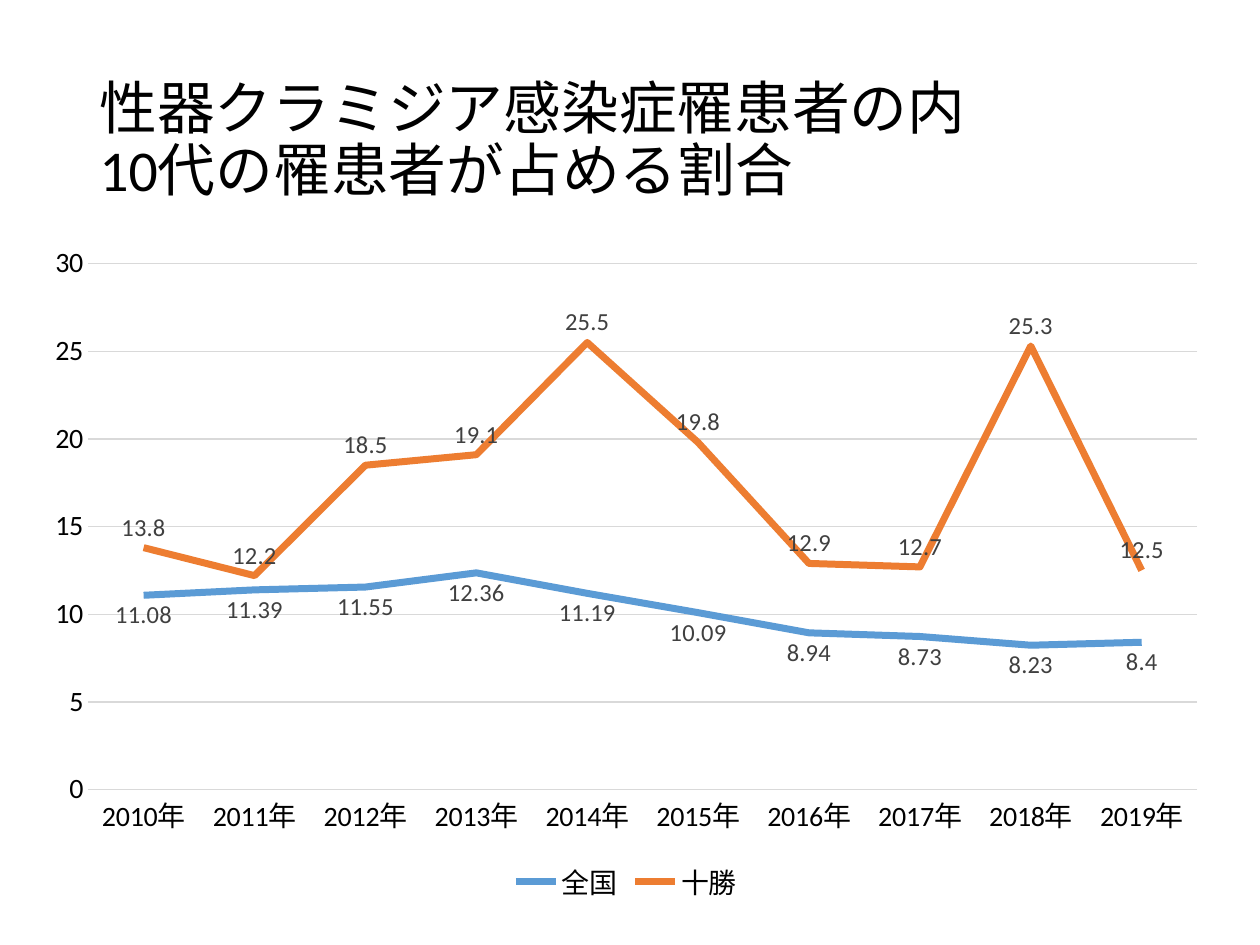
from pptx import Presentation
from pptx.chart.data import CategoryChartData
from pptx.dml.color import RGBColor
from pptx.enum.chart import (XL_CHART_TYPE, XL_LABEL_POSITION, XL_LEGEND_POSITION,
                             XL_MARKER_STYLE, XL_TICK_MARK)
from pptx.enum.text import MSO_ANCHOR
from pptx.util import Inches, Pt

BLACK = RGBColor(0x00, 0x00, 0x00)
LABEL_GRAY = RGBColor(0x40, 0x40, 0x40)
GRID_GRAY = RGBColor(0xD9, 0xD9, 0xD9)
BLUE = RGBColor(0x5B, 0x9B, 0xD5)
ORANGE = RGBColor(0xED, 0x7D, 0x31)
FONT = "Calibri"

WIDTH, HEIGHT = Inches(10), Inches(7.5)
TITLE_BOX = (Inches(0.69), Inches(0.4), Inches(8.62), Inches(1.45))
CHART_BOX = (Inches(0.25), Inches(1.85), Inches(9.44), Inches(5.35))

TITLE = "性器クラミジア感染症罹患者の内\v10代の罹患者が占める割合"
YEARS = [f"{year}年" for year in range(2010, 2020)]
SERIES = [
    ("全国", [11.08, 11.39, 11.55, 12.36, 11.19, 10.09, 8.94, 8.73, 8.23, 8.4],
     BLUE, XL_LABEL_POSITION.BELOW),
    ("十勝", [13.8, 12.2, 18.5, 19.1, 25.5, 19.8, 12.9, 12.7, 25.3, 12.5],
     ORANGE, XL_LABEL_POSITION.ABOVE),
]


def set_font(font, size, color=BLACK):
    font.name = FONT
    font.size = Pt(size)
    font.color.rgb = color


def set_line(line, color, width):
    line.color.rgb = color
    line.width = Pt(width)


def add_title(slide, box):
    tf = slide.shapes.add_textbox(*box).text_frame
    tf.word_wrap = True
    tf.vertical_anchor = MSO_ANCHOR.MIDDLE
    p = tf.paragraphs[0]
    p.text = TITLE
    p.line_spacing = 0.9
    set_font(p.font, 33)


def style_axes(chart):
    for axis in (chart.category_axis, chart.value_axis):
        axis.major_tick_mark = axis.minor_tick_mark = XL_TICK_MARK.NONE
        set_font(axis.tick_labels.font, 16)
    set_line(chart.category_axis.format.line, GRID_GRAY, 0.75)

    value_axis = chart.value_axis
    value_axis.minimum_scale, value_axis.maximum_scale = 0, 30
    value_axis.major_unit = 5
    value_axis.format.line.fill.background()
    set_line(value_axis.major_gridlines.format.line, GRID_GRAY, 0.75)


def style_series(series, color, label_position):
    series.smooth = False
    series.marker.style = XL_MARKER_STYLE.NONE
    set_line(series.format.line, color, 4)
    labels = series.data_labels
    labels.show_value = True
    labels.position = label_position
    set_font(labels.font, 14, LABEL_GRAY)


def add_line_chart(slide, box):
    data = CategoryChartData()
    data.categories = YEARS
    for name, values, _, _ in SERIES:
        data.add_series(name, values)
    chart = slide.shapes.add_chart(XL_CHART_TYPE.LINE, *box, data).chart
    chart.has_title = False
    set_font(chart.font, 10)
    chart.plots[0].vary_by_categories = False
    style_axes(chart)
    for series, (_, _, color, position) in zip(chart.plots[0].series, SERIES):
        style_series(series, color, position)

    chart.has_legend = True
    chart.legend.position = XL_LEGEND_POSITION.BOTTOM
    chart.legend.include_in_layout = False
    set_font(chart.legend.font, 16)


def main():
    prs = Presentation()
    prs.slide_width, prs.slide_height = WIDTH, HEIGHT
    slide = prs.slides.add_slide(prs.slide_layouts[6])
    add_title(slide, TITLE_BOX)
    add_line_chart(slide, CHART_BOX)
    prs.save("out.pptx")


if __name__ == "__main__":
    main()
